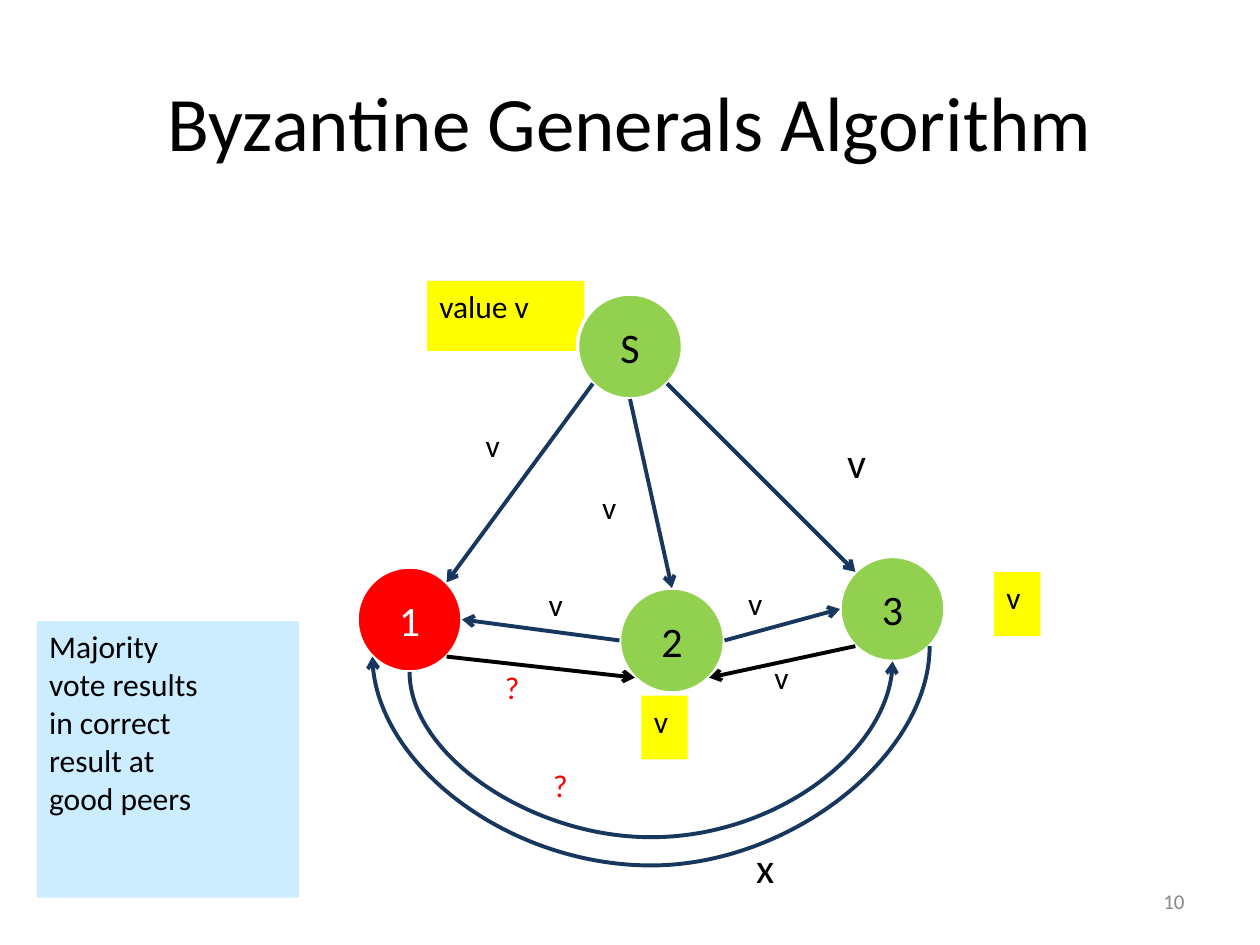
from math import cos, radians, sin

from lxml import etree
from pptx import Presentation
from pptx.dml.color import RGBColor
from pptx.enum.shapes import MSO_CONNECTOR as CONN, MSO_SHAPE as SHAPE
from pptx.enum.text import MSO_ANCHOR as ANCHOR, PP_ALIGN as ALIGN
from pptx.oxml.ns import qn
from pptx.util import Pt

COLORS = {"black": "000000", "white": "FFFFFF", "green": "92D050",
          "red": "FF0000", "yellow": "FFFF00", "sky": "CCECFF",
          "navy": "17375E", "gray": "898989"}
RADIUS = 30
# name: centre x, centre y, fill, text colour
NODES = {"S": (360, 198, "green", "black"), "1": (234, 354, "red", "white"),
         "2": (384, 366, "green", "black"), "3": (510, 348, "green", "black")}
# degrees clockwise from the right-hand side
ANGLES = {"right": 0, "bottom right": 45, "bottom": 90, "bottom left": 135,
          "left": 180, "top left": 225, "top": 270, "top right": 315}
MESSAGES = [
    ("S", "bottom left", "1", "top right", "navy"),
    ("S", "bottom", "2", "top", "navy"),
    ("S", "bottom right", "3", "top left", "navy"),
    ("2", "left", "1", "right", "navy"),
    ("2", "right", "3", "left", "navy"),
    ("1", "bottom right", "2", "bottom left", "black"),
    ("3", "bottom left", "2", "bottom right", "black")]
# left, top, text, size, colour
LABELS = [(270.5, 240, "v", 18, "black"), (337, 275.5, "v", 18, "black"),
          (477, 246, "v", 24, "black"), (425, 477.5, "x", 24, "black"),
          (306.5, 330.5, "v", 18, "black"), (420.5, 330, "v", 18, "black"),
          (435.5, 372.5, "v", 18, "black"), (309, 434, "?", 18, "red"),
          (281.5, 378, "?", 18, "red")]
# left, top, width, height, fill, paragraphs made of lines
BOXES = [
    (244, 160.5, 90, 40, "yellow", [["value v"]]),
    (366.5, 397.5, 26.5, 36.5, "yellow", [["v"]]),
    (568, 327, 26.5, 36.5, "yellow", [["v"]]),
    (21, 355, 150, 158, "sky",
     [["Majority"],
      ["vote results", "in correct", "result at", "good peers"]])]


def rgb(name):
    return RGBColor.from_string(COLORS[name])


def write(sp, paragraphs, size, color, align=ALIGN.LEFT, anchor=ANCHOR.TOP):
    tf = sp.text_frame
    tf.word_wrap = True
    tf.vertical_anchor = anchor
    for i, lines in enumerate(paragraphs):
        p = tf.add_paragraph() if i else tf.paragraphs[0]
        p.alignment = align
        for j, line in enumerate(lines):
            if j:
                p.add_line_break()
            r = p.add_run()
            r.text = line
            r.font.name = "Calibri"
            r.font.size = Pt(size)
            r.font.color.rgb = rgb(color)


def add_text(s, left, top, width, height, text, size, color, **layout):
    sp = s.shapes.add_textbox(Pt(left), Pt(top), Pt(width), Pt(height))
    write(sp, [[text]], size, color, **layout)


def add_filled(s, kind, left, top, width, height, fill):
    sp = s.shapes.add_shape(kind, Pt(left), Pt(top), Pt(width), Pt(height))
    sp.shadow.inherit = False
    sp.fill.solid()
    sp.fill.fore_color.rgb = rgb(fill)
    sp.line.fill.background()
    return sp


def add_node(s, name):
    x, y, fill, color = NODES[name]
    sp = add_filled(s, SHAPE.OVAL, x - RADIUS, y - RADIUS,
                    2 * RADIUS, 2 * RADIUS, fill)
    sp.line.color.rgb = rgb("white")
    sp.line.width = Pt(2)
    write(sp, [[name]], 24, color, ALIGN.CENTER, ANCHOR.MIDDLE)


def site(name, side):
    """Point on the rim of a node."""
    x, y = NODES[name][:2]
    angle = radians(ANGLES[side])
    return x + RADIUS * cos(angle), y + RADIUS * sin(angle)


def add_arrow(s, kind, x1, y1, x2, y2, color, end="tailEnd"):
    cxn = s.shapes.add_connector(kind, Pt(x1), Pt(y1), Pt(x2), Pt(y2))
    cxn.line.color.rgb = rgb(color)
    cxn.line.width = Pt(2.25)
    ln = cxn.line._get_or_add_ln()
    etree.SubElement(ln, qn("a:" + end), type="arrow")
    etree.SubElement(cxn._element.spPr, qn("a:effectLst"))
    return cxn


def add_arc(s, start, finish, depth, end):
    """Curve hanging depth points below start: a flipped connector turned 90°."""
    (x1, y1), (x2, y2) = start, finish
    width, height = y1 - y2, x2 - x1
    left, top = (x1 + x2 - width) / 2, (y1 + y2 - height) / 2
    cxn = add_arrow(s, CONN.CURVE, left, top, left + width, top + height,
                    "navy", end)
    xfrm = cxn._element.spPr.find(qn("a:xfrm"))
    for key, value in (("rot", "5400000"), ("flipH", "1"), ("flipV", "1")):
        xfrm.set(key, value)
    guides = cxn._element.spPr.find(qn("a:prstGeom")).get_or_add_avLst()
    etree.SubElement(guides, qn("a:gd"), name="adj1",
                     fmla=f"val {round(-depth / width * 100000)}")


def main():
    prs = Presentation()
    prs.slide_width, prs.slide_height = Pt(720), Pt(540)
    s = prs.slides.add_slide(prs.slide_layouts[6])

    add_text(s, 54, 24, 612, 90, "Byzantine Generals Algorithm", 44, "black",
             align=ALIGN.CENTER, anchor=ANCHOR.MIDDLE)
    for left, top, width, height, fill, paragraphs in BOXES:
        sp = add_filled(s, SHAPE.RECTANGLE, left, top, width, height, fill)
        write(sp, paragraphs, 18, "black")
    for name in NODES:
        add_node(s, name)
    for source, out_side, target, in_side, color in MESSAGES:
        add_arrow(s, CONN.STRAIGHT, *site(source, out_side),
                  *site(target, in_side), color)
    add_arc(s, site("1", "bottom left"), site("3", "bottom right"),
            119.2, "headEnd")
    add_arc(s, site("1", "bottom"), site("3", "bottom"), 94.3, "tailEnd")
    for left, top, text, size, color in LABELS:
        add_text(s, left, top, 28, 36.5, text, size, color)
    add_text(s, 516, 500.5, 168, 28.75, "10", 12, "gray",
             align=ALIGN.RIGHT, anchor=ANCHOR.MIDDLE)
    prs.save("out.pptx")


if __name__ == "__main__":
    main()
